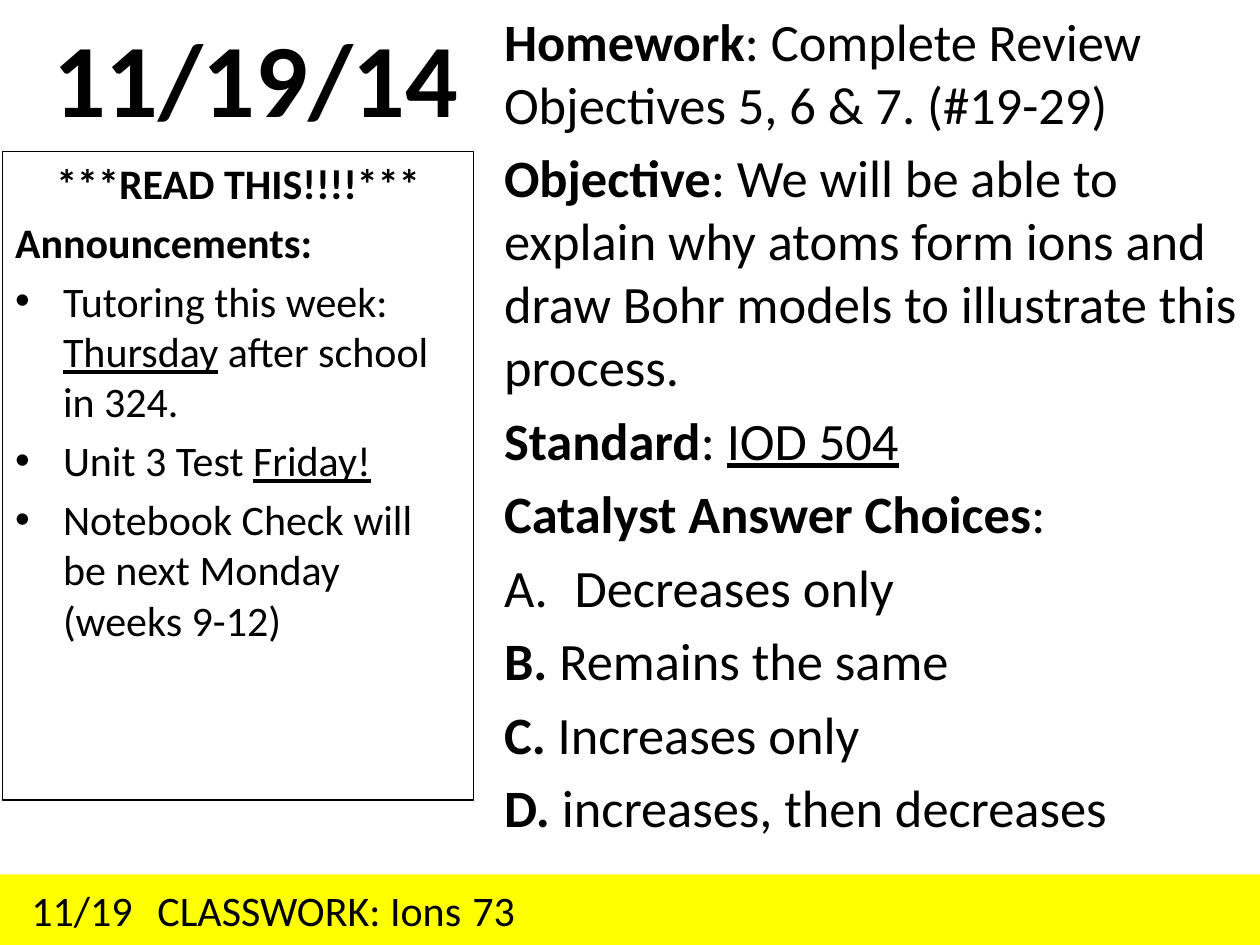
from pptx import Presentation
from pptx.util import Inches, Pt
from pptx.dml.color import RGBColor
from pptx.enum import shapes, text
from pptx.oxml.ns import qn
from lxml import etree

HUES = {"ink": "000000", "bar": "FFFF00"}
INK = RGBColor.from_string(HUES["ink"])
MID = text.PP_ALIGN.CENTER


def place(shape, left, top, width, height):
    shape.left, shape.top = Inches(left), Inches(top)
    shape.width, shape.height = Inches(width), Inches(height)
    shape.text_frame.auto_size = text.MSO_AUTO_SIZE.NONE


def write(frame, rows, size):
    """Fill a frame with (bullet, indent, runs); styles are b bold, u underlined."""
    for i, (mark, indent, runs) in enumerate(rows):
        para = frame.add_paragraph() if i else frame.paragraphs[0]
        props = para._p.get_or_add_pPr()
        props.set("marL", str(Inches(indent)))
        props.set("indent", str(-Inches(indent)))
        tag = {"•": "a:buChar", "A.": "a:buAutoNum"}.get(mark, "a:buNone")
        bullet = etree.SubElement(props, qn(tag))
        if mark == "•":
            bullet.set("char", mark)
        elif mark == "A.":
            bullet.set("type", "alphaUcPeriod")
        for words, style in runs:
            run = para.add_run()
            run.text = words
            font = run.font
            font.name, font.size, font.color.rgb = "Calibri", Pt(size), INK
            font.bold, font.underline = "b" in style, "u" in style


deck = Presentation()
deck.slide_width, deck.slide_height = Inches(10), Inches(7.5)
slide = deck.slides.add_slide(deck.slide_layouts[3])
title, news, plan = slide.placeholders

# Date heading
place(title, -0.47, 0.02, 5, 1.17)
write(title.text_frame, [("", 0, [("11/19/14", "b")])], 59.4)
title.text_frame.paragraphs[0].alignment = MID
title.text_frame.vertical_anchor = text.MSO_ANCHOR.MIDDLE

# Announcements
place(news, 0.02, 1.2, 3.74, 5.15)
news.line.color.rgb = INK
news.line.width = Pt(0.75)
write(news.text_frame, [
    ("", 0, [("***READ THIS!!!!***", "b")]),
    ("", 0, [("Announcements:", "b")]),
    ("•", 0.38, [("Tutoring this week: ", ""), ("Thursday", "u"),
                 (" after school in 324.", "")]),
    ("•", 0.38, [("Unit 3 Test ", ""), ("Friday!", "u")]),
    ("•", 0.38, [("Notebook Check will be next Monday (weeks 9-12)", "")]),
], 24)
news.text_frame.paragraphs[0].alignment = MID

# Homework, objective and answer choices
place(plan, 3.9, 0.02, 6.34, 6.64)
write(plan.text_frame, [
    ("", 0, [("Homework", "b"),
             (": Complete Review Objectives 5, 6 & 7. (#19-29)", "")]),
    ("", 0, [("Objective", "b"),
             (": We will be able to explain why atoms form ions and draw "
              "Bohr models to illustrate this process.", "")]),
    ("", 0, [("Standard", "b"), (": ", ""), ("IOD 504", "u")]),
    ("", 0, [("Catalyst Answer Choices", "b"), (":", "")]),
    ("A.", 0.56, [("Decreases only", "")]),
    ("", 0, [("B. ", "b"), ("Remains the same", "")]),
    ("", 0, [("C. ", "b"), ("Increases only", "")]),
    ("", 0, [("D. ", "b"), ("increases, then decreases", "")]),
], 30)

# Classwork bar, spread by a centre and a right tab stop
bar = slide.shapes.add_shape(shapes.MSO_SHAPE.RECTANGLE, 0, 0, 0, 0)
place(bar, 0, 6.94, 10, 0.56)
bar.shadow.inherit = False
bar.fill.solid()
bar.fill.fore_color.rgb = RGBColor.from_string(HUES["bar"])
bar.line.fill.background()
frame = bar.text_frame
frame.margin_left = Inches(0.25)
frame.vertical_anchor = text.MSO_ANCHOR.MIDDLE
write(frame, [("", 0, [("11/19\tCLASSWORK: Ions\t73", "")])], 24)
para = frame.paragraphs[0]
para.alignment = text.PP_ALIGN.LEFT
stops = etree.SubElement(para._p.get_or_add_pPr(), qn("a:tabLst"))
for spot, side in ((4.7, "ctr"), (9.34, "r")):
    etree.SubElement(stops, qn("a:tab"), pos=str(Inches(spot)), algn=side)

deck.save("out.pptx")
